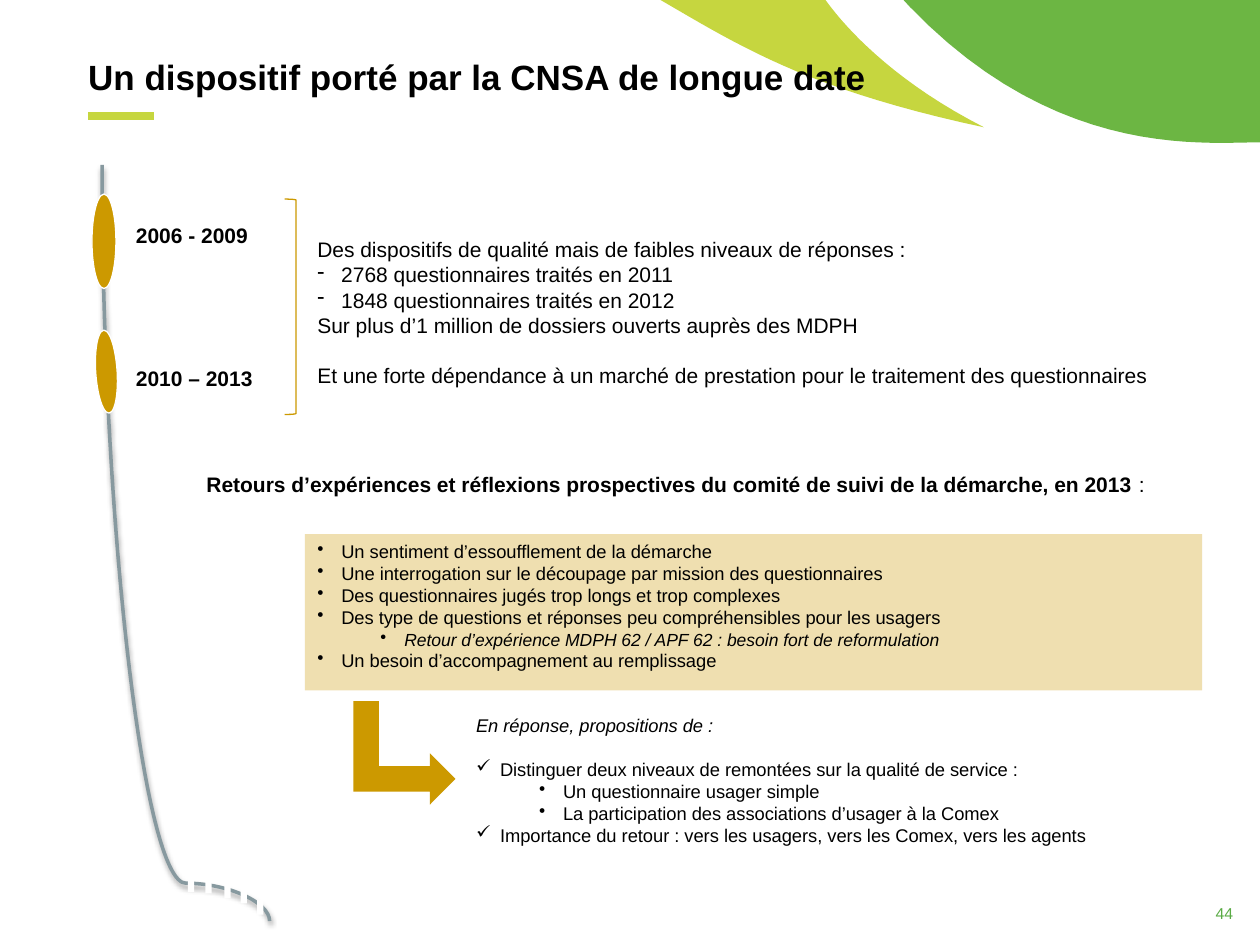
from dataclasses import dataclass

from lxml import etree
from pptx import Presentation
from pptx import util as u
from pptx.dml.color import RGBColor
from pptx.enum import shapes, text
from pptx.oxml import ns

GREEN = RGBColor(0x6C, 0xB6, 0x43)
LIME = RGBColor(0xC6, 0xD6, 0x3F)
NUMBER_GREEN = RGBColor(0x5A, 0xAB, 0x45)
GOLD = RGBColor(0xCC, 0x99, 0x00)
GREY = RGBColor(0x87, 0x99, 0x9F)
BLACK = RGBColor(0, 0, 0)
WHITE = RGBColor(0xFF, 0xFF, 0xFF)

FONT = "Arial"
COLUMNS, ROWS = 100, 75
CELL = u.Inches(10) // COLUMNS
HANG = 1.9
SUB_INDENT = 5
KIND = shapes.MSO_SHAPE


@dataclass
class Box:
    left: float
    top: float
    width: float
    height: float

    def inner(self, left, top, width, height):
        return Box(self.left + left, self.top + top, width, height)

    def emu(self):
        return [cells(n) for n in (self.left, self.top, self.width, self.height)]


def cells(count):
    return u.Emu(round(count * CELL))


def add_node(parent, tag, **attributes):
    node = etree.SubElement(parent, ns.qn(tag))
    for name, value in attributes.items():
        node.set(name, str(value))
    return node


def add_figure(page, kind, box, fill=None, line=None):
    figure = page.shapes.add_shape(kind, *box.emu())
    figure.shadow.inherit = False
    if fill is None:
        figure.fill.background()
    else:
        figure.fill.solid()
        figure.fill.fore_color.rgb = fill
    if line is None:
        figure.line.fill.background()
    else:
        figure.line.color.rgb = line
        figure.line.width = u.Pt(0.75)
    return figure


def style_para(para, size, color=BLACK, bold=False, italic=False):
    para.alignment = text.PP_ALIGN.LEFT
    font = para.font
    font.name, font.size, font.bold, font.italic = FONT, u.Pt(size), bold, italic
    font.color.rgb = color


def set_bullet(para, mark, level):
    para.level = level
    props = para._p.get_or_add_pPr()
    props.set("marL", str(cells(HANG + SUB_INDENT * level)))
    props.set("indent", str(-cells(HANG)))
    add_node(props, "a:buChar", char=mark)


def write_lines(frame, lines, size):
    frame.word_wrap = True
    frame.vertical_anchor = text.MSO_ANCHOR.TOP
    for index, (wording, options) in enumerate(lines):
        para = frame.add_paragraph() if index else frame.paragraphs[0]
        para.add_run().text = wording
        options = {"size": size, **options}
        mark, level = options.pop("mark", None), options.pop("level", 0)
        gap = options.pop("gap", 0)
        if mark:
            set_bullet(para, mark, level)
        if gap:
            para.space_before = u.Pt(gap)
        style_para(para, **options)


def add_text(page, box, lines, size):
    frame = page.shapes.add_textbox(*box.emu()).text_frame
    write_lines(frame, lines, size)
    return frame


def curve_points(start, first, second, end, steps=24):
    for step in range(1, steps + 1):
        t = step / steps
        weights = ((1 - t) ** 3, 3 * t * (1 - t) ** 2, 3 * t * t * (1 - t), t ** 3)
        yield tuple(sum(w * p[axis] for w, p in zip(weights, (start, first, second, end)))
                    for axis in (0, 1))


def add_leaf(page, box, start, segments, fill):
    points = [start]
    for segment in segments:
        points += [segment[0]] if len(segment) == 1 else curve_points(points[-1], *segment)
    spots = [(cells(box.left + x), cells(box.top + y)) for x, y in points]
    builder = page.shapes.build_freeform(*spots[0])
    builder.add_line_segments(spots[1:], close=True)
    leaf = builder.convert_to_shape()
    leaf.shadow.inherit = False
    leaf.fill.solid()
    leaf.fill.fore_color.rgb = fill
    leaf.line.fill.background()


def add_line(page, kind, start, end, color, width):
    line = page.shapes.add_connector(kind, *(cells(n) for n in (*start, *end)))
    line.line.color.rgb = color
    line.line.width = u.Pt(width)
    return line, add_node(line._element.spPr, "a:effectLst")


def build_decor(page, box):
    add_leaf(page, box, (100, -1.2),
             [((100, 0.7), (100, 8.1), (100, 11.3)),
              ((95.1, 11.3), (82.8, 12.7), (70.7, -1.1))], GREEN)
    add_leaf(page, box, (50.5, -1.1),
             [((64.8, -1.1),), ((64.8, -1.1), (68.1, 5), (78.1, 10.1)),
              ((62.6, 6.8), (57.5, 2.8), (50.5, -1.1))], LIME)
    add_text(page, box.inner(95.5, 71.2, 4.5, 2.8), [("44", {"color": NUMBER_GREEN})], 9)


def build_title(page, box):
    title = page.shapes.title
    title.left, title.top, title.width, title.height = box.emu()
    frame = title.text_frame
    frame.auto_size = text.MSO_AUTO_SIZE.NONE
    frame.margin_left = 0
    frame.margin_top = frame.margin_bottom = u.Inches(0.05)
    write_lines(frame, [("Un dispositif porté par la CNSA de longue date", {"bold": True})], 20)
    page.shapes._spTree.append(title._element)
    base = box.top + box.height
    add_line(page, shapes.MSO_CONNECTOR.STRAIGHT, (box.left, base), (box.left + 5.2, base),
             LIME, 4.5)


def build_trail(page, box):
    middle_x, middle_y = box.left + box.width / 2, box.top + box.height / 2
    reach, rise = box.height / 2, box.width / 2
    trail, effects = add_line(page, shapes.MSO_CONNECTOR.CURVE,
                              (middle_x + reach, middle_y - rise),
                              (middle_x - reach, middle_y + rise), GREY, 2)
    trail._element.spPr.find(ns.qn("a:xfrm")).set("rot", str(270 * 60000))
    guides = trail._element.spPr.find(ns.qn("a:prstGeom")).find(ns.qn("a:avLst"))
    add_node(guides, "a:gd", name="adj1", fmla="val 95000")
    shadow = add_node(effects, "a:outerShdw", blurRad=u.Pt(3.1), dist=u.Pt(1.6),
                      dir=90 * 60000, rotWithShape=0)
    shade = add_node(shadow, "a:srgbClr", val=BLACK)
    add_node(shade, "a:alpha", val=38000)
    for left, top in ((6.8, 56.5), (8.2, 56.6), (9.7, 57), (11, 57.4), (12.3, 58.3)):
        add_figure(page, KIND.RECTANGLE, box.inner(left, top, 0.5, 1.2), WHITE)


def build_periods(page, box):
    add_figure(page, KIND.OVAL, box.inner(0, 0, 1.9, 7.5), GOLD, WHITE)
    later = add_figure(page, KIND.OVAL, box.inner(0.3, 10.8, 1.7, 6.6), GOLD, WHITE)
    later.rotation = 356.4
    for top, years in ((1.8, "2006 - 2009"), (13.1, "2010 – 2013")):
        add_text(page, box.inner(2.5, top, 22.2, 3), [(years, {"bold": True})], 12)
    add_figure(page, KIND.RIGHT_BRACKET, box.inner(15.3, 0.4, 0.9, 17.1), line=GOLD)
    dash = {"mark": "-"}
    add_text(page, box.inner(16.9, 2.9, 71.4, 13.1), [
        ("Des dispositifs de qualité mais de faibles niveaux de réponses :", {}),
        ("2768 questionnaires traités en 2011", dash),
        ("1848 questionnaires traités en 2012", dash),
        ("Sur plus d’1 million de dossiers ouverts auprès des MDPH", {}),
        ("Et une forte dépendance à un marché de prestation pour le traitement des questionnaires",
         {"gap": 14.5})], 12)


def build_feedback(page, box):
    heading = add_text(page, box.inner(0, 0, 81.6, 3), [
        ("Retours d’expériences et réflexions prospectives du comité de suivi "
         "de la démarche, en 2013 ", {"bold": True})], 12)
    colon = heading.paragraphs[0].add_run()
    colon.text = ":"
    colon.font.bold = False
    panel = add_figure(page, KIND.RECTANGLE, box.inner(8.8, 5.5, 71.2, 12.4), GOLD)
    tint = panel._element.spPr.find(ns.qn("a:solidFill"))[0]
    add_node(tint, "a:alpha", val=31000)
    dot = {"mark": "•"}
    write_lines(panel.text_frame, [
        ("Un sentiment d’essoufflement de la démarche", dot),
        ("Une interrogation sur le découpage par mission des questionnaires", dot),
        ("Des questionnaires jugés trop longs et trop complexes", dot),
        ("Des type de questions et réponses peu compréhensibles pour les usagers", dot),
        ("Retour d’expérience MDPH 62 / APF 62 : besoin fort de reformulation",
         {"mark": "•", "level": 1, "size": 10, "italic": True}),
        ("Un besoin d’accompagnement au remplissage", dot)], 10.5)


def build_proposals(page, box):
    arrow = add_figure(page, KIND.BENT_UP_ARROW, box.inner(0, 0, 8.2, 8.1), GOLD)
    arrow.rotation = 90
    check, sub = {"mark": "✓"}, {"mark": "•", "level": 1}
    add_text(page, box.inner(8.8, 0.5, 58.8, 11.6), [
        ("En réponse, propositions de :", {"italic": True}),
        ("Distinguer deux niveaux de remontées sur la qualité de service :", {**check, "gap": 12.5}),
        ("Un questionnaire usager simple", sub),
        ("La participation des associations d’usager à la Comex", sub),
        ("Importance du retour : vers les usagers, vers les Comex, vers les agents", check)], 10.5)


def main():
    deck = Presentation()
    deck.slide_width, deck.slide_height = cells(COLUMNS), cells(ROWS)
    page = deck.slides.add_slide(deck.slide_layouts[5])
    build_decor(page, Box(0, 0, COLUMNS, ROWS))
    build_title(page, Box(7, 3.9, 86.3, 5.3))
    build_trail(page, Box(8.1, 13.1, 13.3, 60))
    build_periods(page, Box(7.3, 15.4, 88.3, 17.5))
    build_feedback(page, Box(15.4, 36.9, 81.6, 17.9))
    build_proposals(page, Box(28, 55.7, 67.6, 12.1))
    deck.save("out.pptx")


if __name__ == "__main__":
    main()
